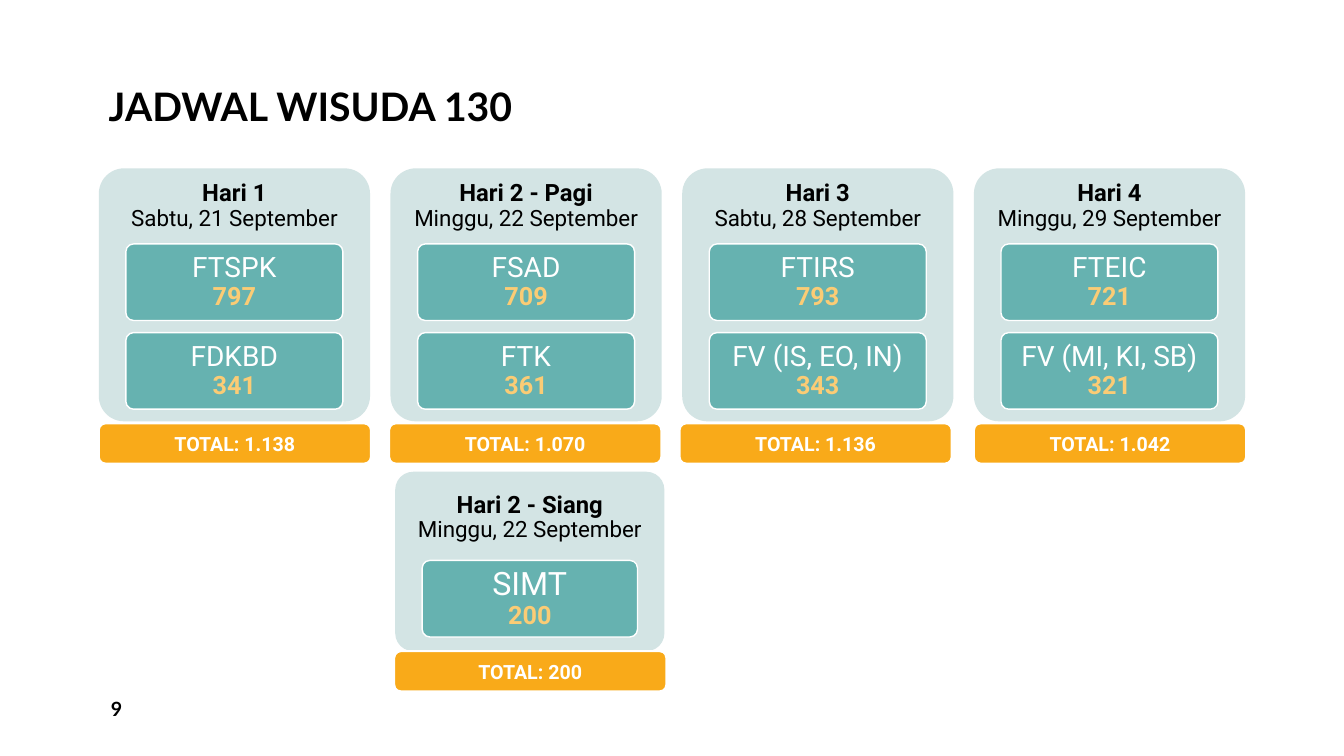
from pptx import Presentation
from pptx.dml.color import RGBColor
from pptx.enum.shapes import MSO_SHAPE
from pptx.enum.text import MSO_ANCHOR, PP_ALIGN
from pptx.util import Inches, Pt

deck = Presentation()
deck.slide_width, deck.slide_height = Inches(13.33), Inches(7.5)
slide = deck.slides.add_slide(deck.slide_layouts[6])

# Grid: four columns of cards, rows of faculty tiles
LEFT, STEP, WIDE = 0.98, 2.893, 2.69
TOP, HEAD, TILE, PITCH = 1.67, 0.75, 0.76, 0.88
BAR = 0.4

# Text styles
TITLE = dict(name="Lato", size=Pt(28), bold=True, color="000000")
PAGE = {**TITLE, "size": Pt(14)}
DAY = dict(name="Roboto", size=Pt(17), bold=True, color="000000")
DATE = {**DAY, "size": Pt(16), "bold": False}
UNIT = {**DATE, "size": Pt(20), "color": "FFFFFF"}
COUNT = {**DAY, "size": Pt(18), "color": "FBCC75"}
TOTAL = {**DAY, "size": Pt(14), "color": "FFFFFF"}


def paint(part, code):
    """Set a hex colour on a font, or on a fill made solid first."""
    if hasattr(part, "solid"):
        part.solid()
        part = part.fore_color
    else:
        part = part.color
    part.rgb = RGBColor.from_string(code)


def block(area, lines=(), fill=None, line=0, curve=0.1, inset=0.06,
          align=PP_ALIGN.CENTER, anchor=MSO_ANCHOR.MIDDLE, space=0.9):
    """Place a rounded box, or a bare text box when there is no fill."""
    area = [Inches(n) for n in area]
    if fill:
        shape = slide.shapes.add_shape(MSO_SHAPE.ROUNDED_RECTANGLE, *area)
        shape.adjustments[0] = curve
        shape.shadow.inherit = False
        paint(shape.fill, fill)
        if line:
            paint(shape.line.fill, "FFFFFF")
            shape.line.width = Pt(line)
        else:
            shape.line.fill.background()
    else:
        shape = slide.shapes.add_textbox(*area)
    frame = shape.text_frame
    form = dict(word_wrap=True, vertical_anchor=anchor,
                margin_left=Inches(inset), margin_right=Inches(inset),
                margin_top=Inches(0.05), margin_bottom=Inches(0.05))
    for key, val in form.items():
        setattr(frame, key, val)
    for i, (text, style) in enumerate(lines):
        para = frame.add_paragraph() if i else frame.paragraphs[0]
        para.alignment, para.line_spacing = align, space
        run = para.add_run()
        run.text = text
        for key, val in style.items():
            if key == "color":
                paint(run.font, val)
            else:
                setattr(run.font, key, val)


# Title and page number
block((0.98, 0.08, 11.38, 1.26), [("JADWAL WISUDA 130", TITLE)],
      inset=0.1, align=PP_ALIGN.LEFT, anchor=MSO_ANCHOR.BOTTOM)
block((1, 6.83, 2.92, 0.4), [("9", PAGE)],
      inset=0.1, align=PP_ALIGN.LEFT, space=1)

# Day, date, faculties, total, left edge of the total bar
days = [
    ("Hari 1", "Sabtu, 21 September",
     [("FTSPK", "797"), ("FDKBD", "341")], "1.138", 0.98),
    ("Hari 2 - Pagi", "Minggu, 22 September",
     [("FSAD", "709"), ("FTK", "361")], "1.070", 3.86),
    ("Hari 3", "Sabtu, 28 September",
     [("FTIRS", "793"), ("FV (IS, EO, IN)", "343")], "1.136", 6.74),
    ("Hari 4", "Minggu, 29 September",
     [("FTEIC", "721"), ("FV (MI, KI, SB)", "321")], "1.042", 9.66),
    ("Hari 2 - Siang", "Minggu, 22 September",
     [("SIMT", "200")], "200", 3.91),
]

# Cards: four in the top row, the afternoon one below the second
for i, (day, date, units, total, edge) in enumerate(days):
    late = i == len(days) - 1
    x, y = (3.92, 4.68) if late else (LEFT + i * STEP, TOP)
    wide, high = (2.67, 1.78) if late else (WIDE, 2.51)
    first = y + (0.88 if late else HEAD)
    block((x, y, wide, high), fill="D3E4E4")
    block((x, y + (0.08 if late else 0), wide, HEAD),
          [(day, DAY), (date, DATE)])
    for row, (unit, count) in enumerate(units):
        style = {**UNIT, "size": Pt(23)} if late else UNIT
        block((x + wide / 10, first + row * PITCH, wide * 0.8, TILE),
              [(unit, style), (count, COUNT)], fill="66B2B0", line=1)
    block((edge, 6.46 if late else 4.2, 2.7, BAR),
          [("TOTAL: " + total, TOTAL)],
          fill="F9AA19", line=1.5, curve=0.1667, space=1)

deck.save("out.pptx")
